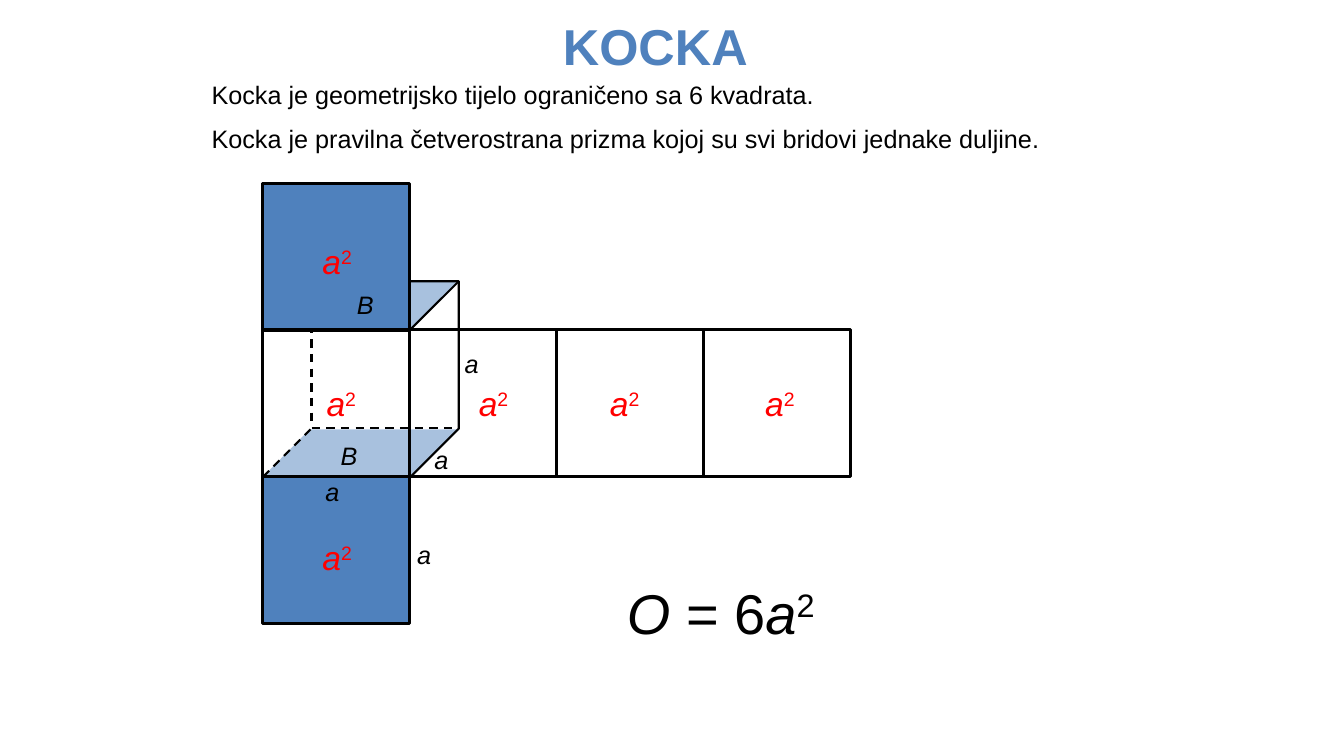
from lxml.etree import SubElement
from pptx import Presentation
from pptx.dml.color import RGBColor
from pptx.enum.dml import MSO_LINE
from pptx.enum.shapes import MSO_CONNECTOR, MSO_SHAPE as SHAPE
from pptx.enum.text import MSO_AUTO_SIZE as FIT, PP_ALIGN as ALIGN
from pptx.oxml.ns import qn
from pptx.util import Emu, Pt

BLACK, BLUE, RED = "000000", "4F81BD", "FF0000"
PX = 9144


def px(*lengths):
    return [Emu(n * PX) for n in lengths]


def color(value):
    return RGBColor.from_string(value)


class Deck:
    """Draws styled elements on the current slide, in px of 1/100 inch."""

    def __init__(self, width, height, font):
        self.prs = Presentation()
        self.prs.slide_width, self.prs.slide_height = px(width, height)
        self.s = self.prs.slides.add_slide(self.prs.slide_layouts[6])
        self.font = font

    def shape(self, kind, box, fill=None, line=None, adj=None, alpha=None):
        sp = self.s.shapes.add_shape(kind, *px(*box))
        sp.shadow.inherit = False
        if adj is not None:
            sp.adjustments[0] = adj
        if fill:
            sp.fill.solid()
            sp.fill.fore_color.rgb = color(fill)
        else:
            sp.fill.background()
        if alpha:
            clr = sp.fill._xPr.find(qn("a:solidFill"))[0]
            SubElement(clr, qn("a:alpha")).set("val", str(alpha * 1000))
        if line:
            sp.line.color.rgb = color(BLACK)
            sp.line.width = Pt(line)
        else:
            sp.line.fill.background()

    def dashed(self, *ends):
        c = self.s.shapes.add_connector(MSO_CONNECTOR.STRAIGHT, *px(*ends))
        c.line.color.rgb = color(BLACK)
        c.line.width = Pt(1.5)
        c.line.dash_style = MSO_LINE.DASH
        SubElement(c._element.spPr, qn("a:effectLst"))

    def text(self, box, paragraphs, size, fill=BLACK, bold=False,
             align=ALIGN.LEFT, wrap=True, before=0):
        tf = self.s.shapes.add_textbox(*px(*box)).text_frame
        tf.word_wrap = wrap
        tf.auto_size = FIT.SHAPE_TO_FIT_TEXT
        for i, runs in enumerate(paragraphs):
            p = tf.add_paragraph() if i else tf.paragraphs[0]
            p.alignment = align
            if i:
                p.space_before = Pt(before)
            for text, style in runs:
                r = p.add_run()
                r.text = text
                r.font.name = self.font
                r.font.size = Pt(size)
                r.font.bold = bold
                r.font.italic = style == "italic"
                r.font.color.rgb = color(fill)
                if style == "super":
                    r.font._element.set("baseline", "30000")

    def letter(self, x, y, width, name):
        self.text((x, y, width, 40), [[(name, "italic")]], 18)

    def area(self, x, y):
        self.text((x, y, 51, 51), [[("a", "italic"), ("2", "super")]], 24,
                  RED, wrap=False)


def main():
    deck = Deck(1333, 750, "Arial")
    side, left, top = 146, 260, 327

    for y in (426, 279):
        deck.shape(SHAPE.PARALLELOGRAM, (261, y, 193, 47), BLUE,
                   adj=0.982, alpha=49)
    facts = ["Kocka je geometrijsko tijelo ograničeno sa 6 kvadrata.",
             "Kocka je pravilna četverostrana prizma kojoj su svi bridovi "
             "jednake duljine."]
    deck.text((200, 74, 933, 86), [[(fact, "")] for fact in facts], 18,
              before=10)

    deck.shape(SHAPE.CUBE, (left, 279, 195, 195), line=1.5)
    for ends in ((309, 278, 309, 424), (309, 425, 455, 425),
                 (261, 473, 308, 426)):
        deck.dashed(*ends)
    for y in (top - side + 1, top + side):
        deck.shape(SHAPE.RECTANGLE, (left, y, side, side), BLUE, 2)
    for i in range(4):
        deck.shape(SHAPE.RECTANGLE, (left + i * side, top, side, side), line=2)

    deck.text((612, 569, 215, 77), [[("O", "italic"), (" = 6", ""),
                                     ("a", "italic"), ("2", "super")]], 40)
    for x, y in ((310, 234), (310, 528), (314, 375), (465, 375),
                 (595, 375), (749, 375)):
        deck.area(x, y)
    for x, y in ((328, 432), (344, 282)):
        deck.letter(x, y, 38, "B")
    for x, y in ((313, 468), (421, 436), (451, 341), (404, 530)):
        deck.letter(x, y, 63, "a")
    deck.text((512, 10, 276, 71), [[("KOCKA", "")]], 36, BLUE, bold=True,
              align=ALIGN.CENTER)
    deck.prs.save("out.pptx")


if __name__ == "__main__":
    main()
